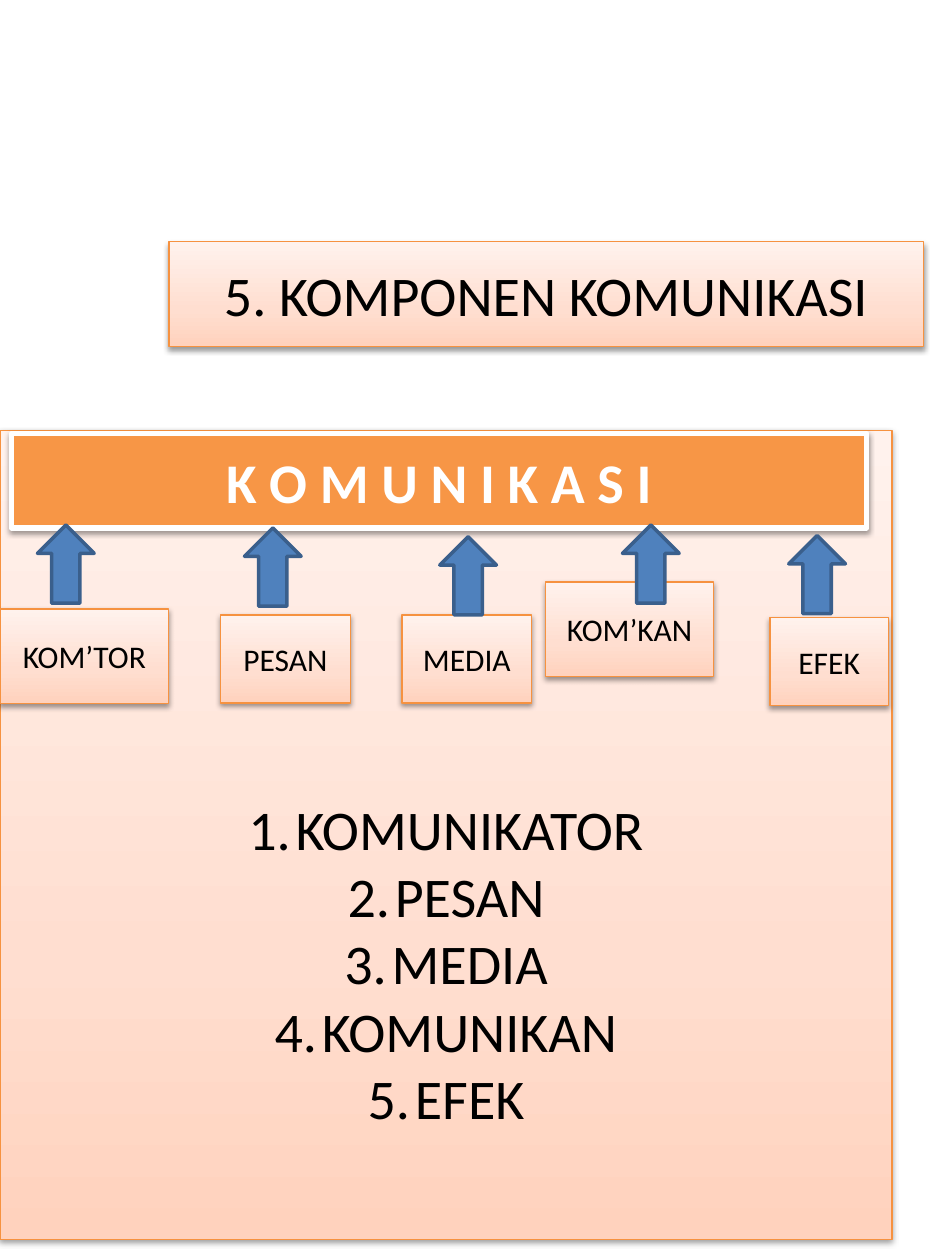
from dataclasses import dataclass

from pptx import Presentation
from pptx.dml.color import RGBColor
from pptx.enum.shapes import MSO_SHAPE as Preset
from pptx.enum.text import MSO_ANCHOR as Anchor, MSO_AUTO_SIZE as AutoSize, PP_ALIGN as Align
from pptx.oxml import parse_xml
from pptx.oxml.ns import nsdecls, qn
from pptx.util import Pt


@dataclass(frozen=True)
class Theme:
    font: str = "Calibri"
    large: float = 32
    small: float = 18
    text: str = "000000"
    light_text: str = "FFFFFF"
    accent: str = "F79646"
    accent_line: str = "F69240"
    arrow: str = "4F81BD"
    arrow_line: str = "3A5F8C"
    gradient: tuple = ((0, "FFD2BD"), (35, "FFDED0"), (100, "FFF2ED"))


def set_all(target, values):
    for name, value in values.items():
        setattr(target, name, value)


class SlideBuilder:
    """Holds the theme and the slide being filled; all lengths are in points."""

    def __init__(self, slide, theme):
        self.slide = slide
        self.theme = theme

    def place(self, shape, bounds):
        names = ("left", "top", "width", "height")
        set_all(shape, dict(zip(names, map(Pt, bounds))))

    def outline(self, shape, color, width):
        shape.line.color.rgb = RGBColor.from_string(color)
        shape.line.width = Pt(width)

    def add_shadow(self, shape):
        shape.shadow.inherit = False
        effects = shape._element.spPr.find(qn("a:effectLst"))
        effects.append(parse_xml(
            f'<a:outerShdw {nsdecls("a")} blurRad="{Pt(3.1)}" dist="{Pt(1.6)}" '
            'dir="5400000" rotWithShape="0"><a:srgbClr val="000000">'
            '<a:alpha val="38000"/></a:srgbClr></a:outerShdw>'))

    def style_card(self, shape):
        """Give a shape the peach three-stop gradient, thin border and shadow."""
        shape.fill.gradient()
        properties = shape._element.spPr
        stops = "".join(
            f'<a:gs pos="{position * 1000}"><a:srgbClr val="{color}"/></a:gs>'
            for position, color in self.theme.gradient)
        gradient = parse_xml(
            f'<a:gradFill {nsdecls("a")} rotWithShape="1"><a:gsLst>{stops}</a:gsLst>'
            '<a:lin ang="16200000" scaled="0"/></a:gradFill>')
        properties.replace(properties.find(qn("a:gradFill")), gradient)
        self.outline(shape, self.theme.accent_line, 0.75)
        self.add_shadow(shape)

    def fill_text(self, shape, lines, size, color=None, bold=False, numbered=False):
        frame = shape.text_frame
        set_all(frame, {"text": "\n".join(lines), "word_wrap": True,
                        "auto_size": AutoSize.NONE, "vertical_anchor": Anchor.MIDDLE})
        for paragraph in frame.paragraphs:
            set_all(paragraph, {"alignment": Align.CENTER, "space_before": Pt(0)})
            if numbered:
                properties = paragraph._p.get_or_add_pPr()
                properties.set("marL", str(Pt(27)))
                properties.set("indent", str(Pt(-27)))
                properties.append(parse_xml(
                    f'<a:buAutoNum {nsdecls("a")} type="arabicPeriod"/>'))
            set_all(paragraph.font, {"name": self.theme.font, "size": Pt(size), "bold": bold})
            paragraph.font.color.rgb = RGBColor.from_string(color or self.theme.text)

    def add_preset(self, preset, bounds):
        return self.slide.shapes.add_shape(preset, *map(Pt, bounds))

    def title(self, text, bounds):
        shape = self.slide.shapes.title
        self.place(shape, bounds)
        self.style_card(shape)
        self.fill_text(shape, [text], self.theme.large)

    def numbered_panel(self, lines, bounds, top_inset):
        shape = self.slide.placeholders[1]
        self.place(shape, bounds)
        self.style_card(shape)
        self.fill_text(shape, lines, self.theme.large, numbered=True)
        shape.text_frame.margin_top = Pt(top_inset)

    def card(self, text, bounds):
        shape = self.add_preset(Preset.RECTANGLE, bounds)
        self.style_card(shape)
        self.fill_text(shape, [text], self.theme.small)

    def banner(self, text, bounds):
        shape = self.add_preset(Preset.RECTANGLE, bounds)
        shape.fill.solid()
        shape.fill.fore_color.rgb = RGBColor.from_string(self.theme.accent)
        self.outline(shape, self.theme.light_text, 3)
        self.add_shadow(shape)
        self.fill_text(shape, [text], self.theme.large, self.theme.light_text, bold=True)

    def up_arrow(self, left, top):
        shape = self.add_preset(Preset.UP_ARROW, (left, top, 32.4, 44.64))
        shape.shadow.inherit = False
        shape.fill.solid()
        shape.fill.fore_color.rgb = RGBColor.from_string(self.theme.arrow)
        self.outline(shape, self.theme.arrow_line, 2)


COMPONENTS = ["KOMUNIKATOR", "PESAN", "MEDIA", "KOMUNIKAN", "EFEK"]
CARDS = [
    ("KOM’TOR", (0, 348, 96.5, 54)),
    ("PESAN", (126, 351.4, 74.2, 50.4)),
    ("MEDIA", (229.7, 351.4, 74.2, 50.4)),
    ("KOM’KAN", (311.8, 332.6, 96, 54)),
    ("EFEK", (440, 352.8, 67.7, 50.4)),
]
ARROWS = [(21.4, 300), (139.7, 301.7), (251.3, 306.7), (355.7, 300), (450.7, 306)]


def main():
    presentation = Presentation()
    set_all(presentation, {"slide_width": Pt(540), "slide_height": Pt(720)})
    slide = presentation.slides.add_slide(presentation.slide_layouts[1])
    builder = SlideBuilder(slide, Theme())

    builder.title("5. KOMPONEN KOMUNIKASI", (96.5, 138.2, 431.3, 59.8))
    builder.numbered_panel(COMPONENTS, (0, 246.2, 509.8, 462.2), top_inset=149)
    for text, bounds in CARDS:
        builder.card(text, bounds)
    builder.banner("K O M U N I K A S I", (6.5, 247.7, 488.9, 54))
    for left, top in ARROWS:
        builder.up_arrow(left, top)

    presentation.save("out.pptx")


if __name__ == "__main__":
    main()
